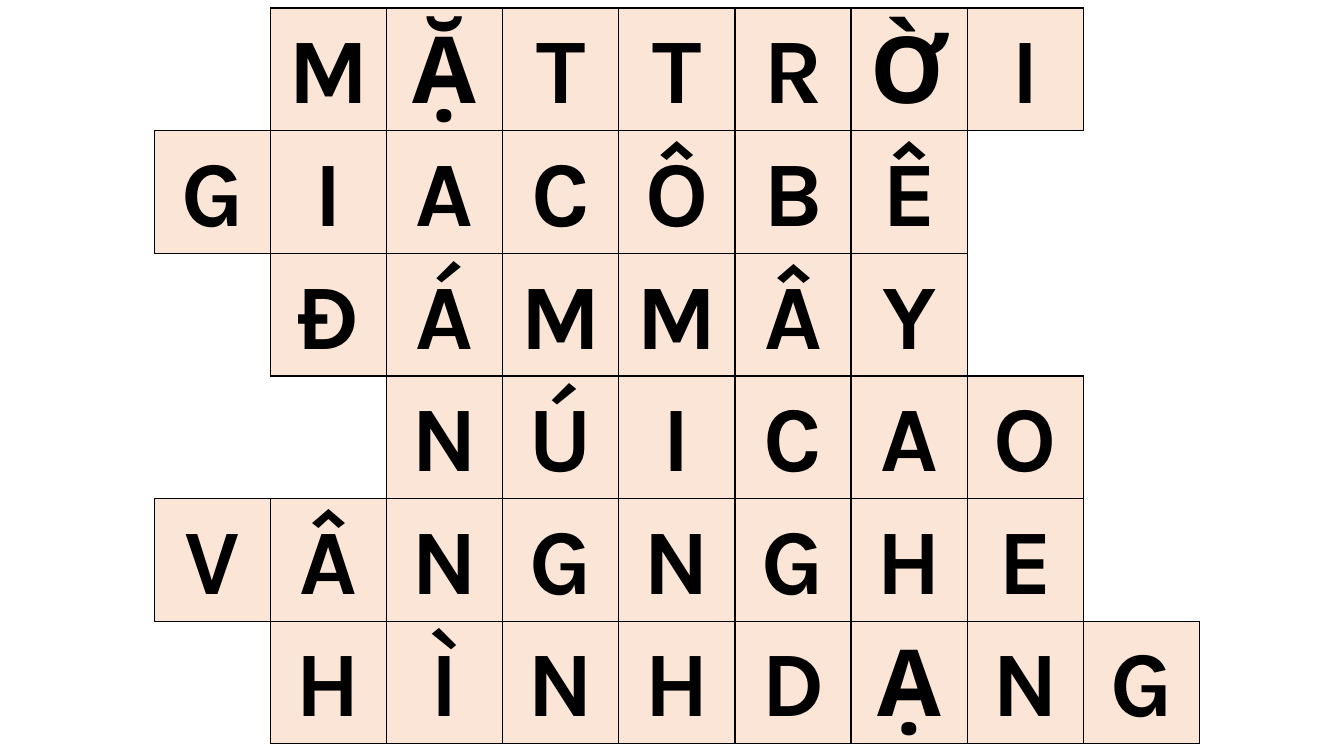
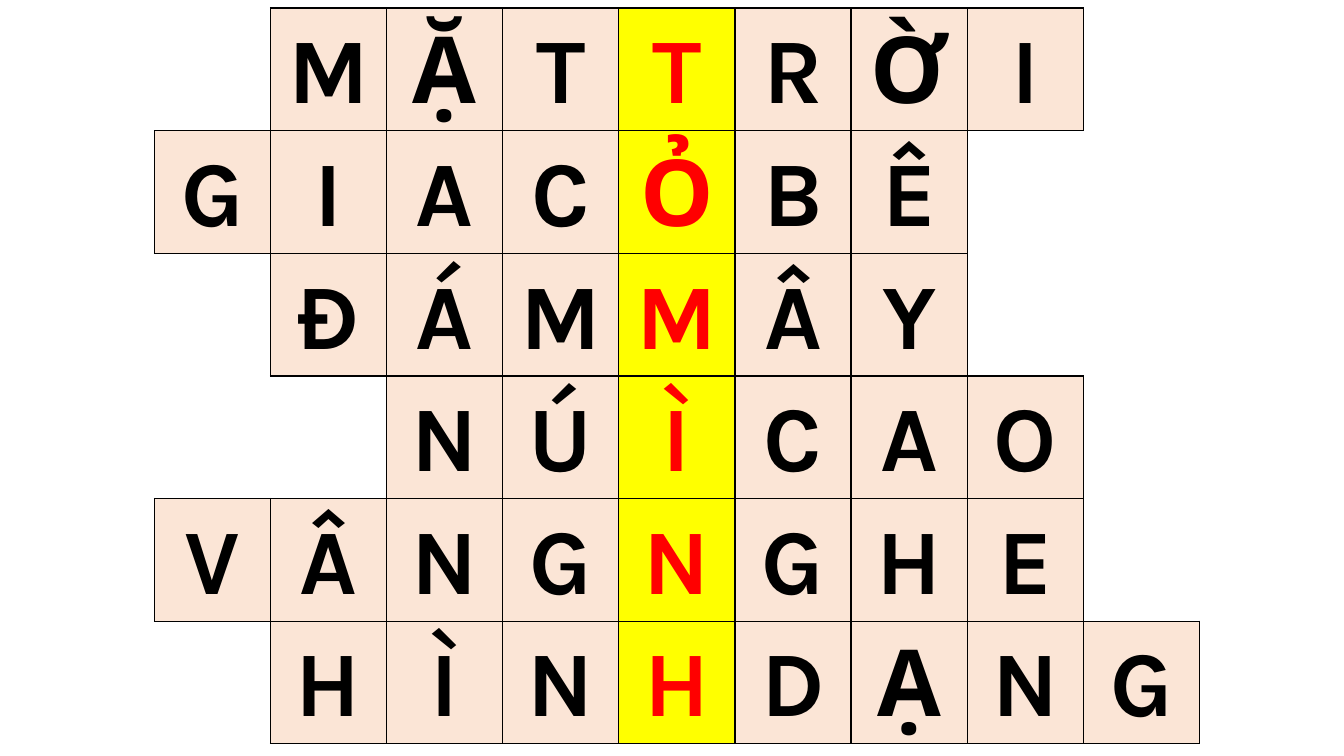
from lxml import etree
from pptx import Presentation, util as u
from pptx.dml.color import RGBColor
from pptx.enum import text
from pptx.oxml import ns

SLIDE_WIDTH, SLIDE_HEIGHT = 13.33, 7.5
COLUMNS = 11
TABLE_LEFT, TABLE_TOP = 0.38, 0.08
TABLE_WIDTH, TABLE_HEIGHT = 12.67, 7.3
KEY_COLUMN = 5
FONT = "Karla"
BLACK, WHITE, PEACH = "000000", "FFFFFF", "FBE5D6"
RED, YELLOW = "FF0000", "FFFF00"
SIDES = {"lnL": (0, -1), "lnR": (0, 1), "lnT": (-1, 0), "lnB": (1, 0)}

ANSWERS = [
    (2, "MẶTTRỜI"),
    (1, "GIACÔBÊ"),
    (2, "ĐÁMMÂY"),
    (3, "NÚICAO"),
    (1, "VÂNGNGHE"),
    (2, "HÌNHDẠNG"),
]
KEYWORD = "TỎMÌNH"


def color(value):
    return RGBColor.from_string(value)


def letter_grid(keyword):
    grid = {}
    for row, (start, answer) in enumerate(ANSWERS):
        for column, letter in enumerate(answer, start):
            grid[row, column] = letter
    for row, letter in enumerate(keyword):
        grid[row, KEY_COLUMN] = letter
    return grid


def fill_cell(cell, value):
    cell.fill.solid()
    cell.fill.fore_color.rgb = color(value)


def write_letter(cell, letter, ink):
    cell.vertical_anchor = text.MSO_ANCHOR.MIDDLE
    cell.margin_left = cell.margin_right = u.Inches(0.07)
    cell.margin_top = cell.margin_bottom = 0
    para = cell.text_frame.paragraphs[0]
    para.alignment = text.PP_ALIGN.CENTER
    para.line_spacing = 1.07
    para.space_after = u.Pt(8)
    span = para.add_run()
    span.text = letter
    span.font.name = FONT
    span.font.size = u.Pt(66)
    span.font.bold = True
    span.font.color.rgb = color(ink)


def draw_borders(cell, row, column, grid):
    properties = cell._tc.get_or_add_tcPr()
    for position, (side, (down, across)) in enumerate(SIDES.items()):
        line = etree.Element(ns.qn(f"a:{side}"), w=str(u.Pt(1)))
        if (row, column) in grid or (row + down, column + across) in grid:
            paint = etree.SubElement(line, ns.qn("a:solidFill"))
            etree.SubElement(paint, ns.qn("a:srgbClr"), val=BLACK)
        else:
            etree.SubElement(line, ns.qn("a:noFill"))
        properties.insert(position, line)


def add_crossword(deck, keyword=""):
    page = deck.slides.add_slide(deck.slide_layouts[6])
    grid = letter_grid(keyword)
    table = page.shapes.add_table(
        len(ANSWERS), COLUMNS, u.Inches(TABLE_LEFT), u.Inches(TABLE_TOP),
        u.Inches(TABLE_WIDTH), u.Inches(TABLE_HEIGHT)).table
    table.first_row = table.horz_banding = False
    for row in range(len(ANSWERS)):
        for column in range(COLUMNS):
            cell = table.cell(row, column)
            highlighted = bool(keyword) and column == KEY_COLUMN
            if (row, column) in grid:
                fill_cell(cell, YELLOW if highlighted else PEACH)
                write_letter(cell, grid[row, column],
                             RED if highlighted else BLACK)
            else:
                fill_cell(cell, WHITE)
            draw_borders(cell, row, column, grid)


def main():
    deck = Presentation()
    deck.slide_width = u.Inches(SLIDE_WIDTH)
    deck.slide_height = u.Inches(SLIDE_HEIGHT)
    add_crossword(deck)
    add_crossword(deck, KEYWORD)
    deck.save("out.pptx")


if __name__ == "__main__":
    main()
